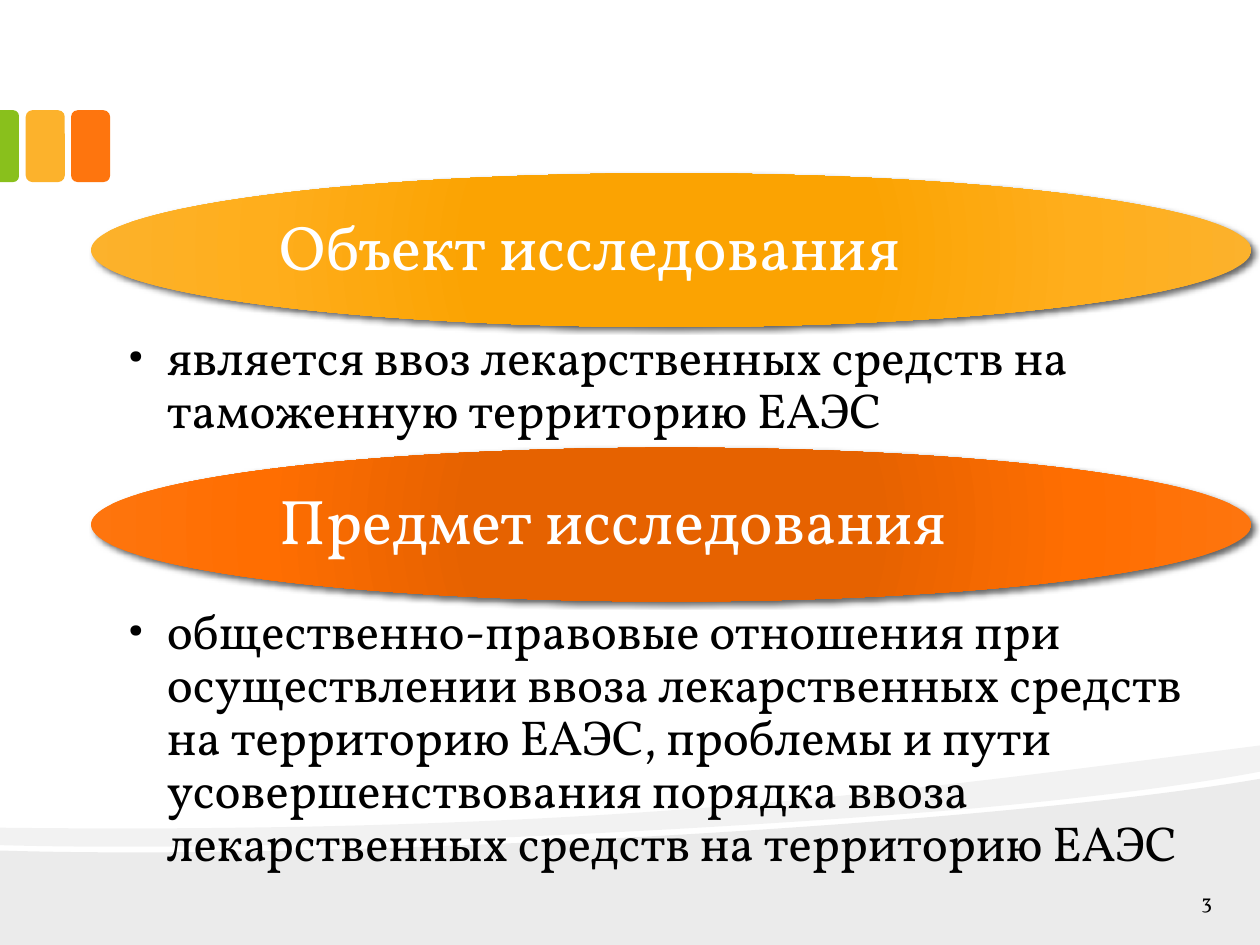
from lxml import etree
from pptx import Presentation
from pptx.dml.color import RGBColor
from pptx.enum import shapes, text
from pptx.oxml import ns
from pptx.util import Pt

FONT = "Vollkorn"
BLACK = RGBColor(0x00, 0x00, 0x00)
WHITE = RGBColor(0xFF, 0xFF, 0xFF)
GREEN = RGBColor(0x89, 0xC0, 0x1C)
AMBER = RGBColor(0xFC, 0xB2, 0x2C)
ORANGE = RGBColor(0xFE, 0x75, 0x0E)
STOPS = (0, 34, 70, 100)
AMBER_GLOW = (RGBColor(0xFD, 0xA3, 0x00), RGBColor(0xFB, 0xA3, 0x02),
              RGBColor(0xFF, 0xAE, 0x1C), AMBER)
ORANGE_GLOW = (RGBColor(0xE6, 0x62, 0x00), RGBColor(0xE6, 0x62, 0x00),
               RGBColor(0xFF, 0x6E, 0x01), ORANGE)
TOPICS = (
    ("Объект исследования",
     "является ввоз лекарственных средств на таможенную территорию ЕАЭС",
     AMBER_GLOW, 69),
    ("Предмет исследования",
     "общественно-правовые отношения при осуществлении ввоза лекарственных "
     "средств на территорию ЕАЭС, проблемы и пути усовершенствования порядка "
     "ввоза лекарственных средств на территорию ЕАЭС",
     ORANGE_GLOW, 161),
)


def add_element(parent, tag, **attributes):
    """Append a DrawingML element and return it."""
    element = etree.SubElement(parent, ns.qn(tag))
    for name, value in attributes.items():
        element.set(name, str(value))
    return element


def add_wave(page, points, curves, alpha):
    """Draw a translucent outline; curves lists the first segment of each curve."""
    builder = page.shapes.build_freeform(*points[0], scale=Pt(1))
    builder.add_line_segments(points[1:], close=True)
    wave = builder.convert_to_shape()
    wave.shadow.inherit = False
    wave.fill.solid()
    wave.fill.fore_color.rgb = BLACK
    wave.line.fill.background()
    color = wave.fill._xPr.find(".//" + ns.qn("a:srgbClr"))
    add_element(color, "a:alpha", val=alpha * 1000)
    segments = list(wave._element.iter(ns.qn("a:lnTo")))
    for first in curves:
        bezier = etree.Element(ns.qn("a:cubicBezTo"))
        segments[first].addprevious(bezier)
        for segment in segments[first:first + 3]:
            bezier.append(segment[0])
            segment.getparent().remove(segment)


def add_waves(page, left, top, width):
    """Draw the two waves at the foot of the page."""
    lower = ((1, 19.44), (1, 114.48), (0, 114.48), (0, 60.48),
             (0.264, 66.24), (0.782, 46.08), (1, 19.44))
    upper = ((1, 0), (1, 15.12),
             (0.942, 23.04), (0.862, 30.24), (0.772, 36),
             (0.523, 51.84), (0.193, 61.92), (0, 57.6), (0, 47.52),
             (0.489, 51.12), (0.728, 25.92), (1, 0))
    for points, curves, alpha in ((lower, (3,), 8), (upper, (1, 4, 8), 5)):
        placed = [(left + x * width, top + y) for x, y in points]
        add_wave(page, placed, curves, alpha)


def add_tabs(page, left, top, height):
    """Draw the three coloured tabs at the page edge."""
    kinds = shapes.MSO_SHAPE
    stub, width, pitch = 10.8, 22.32, 25.92
    tabs = (
        (kinds.ROUNDED_RECTANGLE, left + 14.7 + pitch, width, ORANGE, 0),
        (kinds.ROUNDED_RECTANGLE, left + 14.7, width, AMBER, 0),
        (kinds.ROUND_2_SAME_RECTANGLE, left, stub, GREEN, 90),
    )
    for kind, x, breadth, color, turn in tabs:
        wide, tall = (height, breadth) if turn else (breadth, height)
        tab = page.shapes.add_shape(
            kind, Pt(x + (breadth - wide) / 2), Pt(top + (height - tall) / 2),
            Pt(wide), Pt(tall))
        tab.rotation = turn
        tab.shadow.inherit = False
        tab.fill.solid()
        tab.fill.fore_color.rgb = color
        tab.line.fill.background()
        if turn:
            tab.adjustments[0] = 0.29


def add_text(page, box, words, size, color, insets, middle=True):
    """Place one paragraph in a box and return the paragraph."""
    frame = page.shapes.add_textbox(*map(Pt, box)).text_frame
    frame.word_wrap = True
    frame.margin_left, frame.margin_top, frame.margin_right, frame.margin_bottom = map(
        Pt, insets)
    anchors = text.MSO_ANCHOR
    frame.vertical_anchor = anchors.MIDDLE if middle else anchors.TOP
    frame.text = words
    para = frame.paragraphs[0]
    span = para.runs[0]
    span.font.name = FONT
    span.font.size = Pt(size)
    span.font.color.rgb = color
    return para


def add_ellipse(page, box, colors):
    """Draw a shadowed ellipse with a radial gradient."""
    ellipse = page.shapes.add_shape(shapes.MSO_SHAPE.OVAL, *map(Pt, box))
    ellipse.line.fill.background()
    ellipse.shadow.inherit = False
    properties = ellipse._element.spPr
    gradient = etree.Element(ns.qn("a:gradFill"), rotWithShape="1")
    stops = add_element(gradient, "a:gsLst")
    for position, color in zip(STOPS, colors):
        stop = add_element(stops, "a:gs", pos=position * 1000)
        add_element(stop, "a:srgbClr", val=color)
    shade = add_element(gradient, "a:path", path="circle")
    add_element(shade, "a:fillToRect", l=100000, t=100000, r=100000, b=100000)
    properties.find(ns.qn("a:prstGeom")).addnext(gradient)
    shadow = add_element(properties.find(ns.qn("a:effectLst")), "a:outerShdw",
                         blurRad=Pt(3), dist=Pt(2), dir=45 * 60000)
    color = add_element(shadow, "a:srgbClr", val=BLACK)
    add_element(color, "a:alpha", val=60000)


def add_topic(page, left, top, width, topic):
    """Draw a heading ellipse with its bullet and return the bottom."""
    heading, body, colors, body_height = topic
    height = 87.84
    add_ellipse(page, (left, top, width, height), colors)
    label = add_text(page, (left + 97.2, top + 12.7, 469.44, 61.92),
                     heading, 36, WHITE, (10.8,) * 4)
    label.line_spacing = 0.9
    bullet = add_text(page, (left, top + height, width, body_height),
                      body, 28, BLACK, (20.88, 3.6, 20.16, 3.6), middle=False)
    bullet.level = 1
    bullet.line_spacing = 0.9
    properties = bullet._p.get_or_add_pPr()
    properties.set("marL", str(Pt(22.5)))
    properties.set("indent", str(Pt(-22.5)))
    add_element(properties, "a:buFont", typeface=FONT)
    add_element(properties, "a:buChar", char="•")
    return top + height + body_height


def main():
    """Build the slide and save it."""
    deck = Presentation()
    deck.slide_width, deck.slide_height = Pt(720), Pt(540)
    page = deck.slides.add_slide(deck.slide_layouts[6])
    add_waves(page, 0, 425.52, 720)
    add_tabs(page, 0, 63, 41.04)
    number = add_text(page, (653.76, 507.6, 48.24, 14.4), "3", 12, BLACK,
                      (9.36, 5.04, 9.36, 5.04))
    number.alignment = text.PP_ALIGN.RIGHT
    top = 99
    for topic in TOPICS:
        top = add_topic(page, 52, top, 663.12, topic)
    deck.save("out.pptx")


if __name__ == "__main__":
    main()
